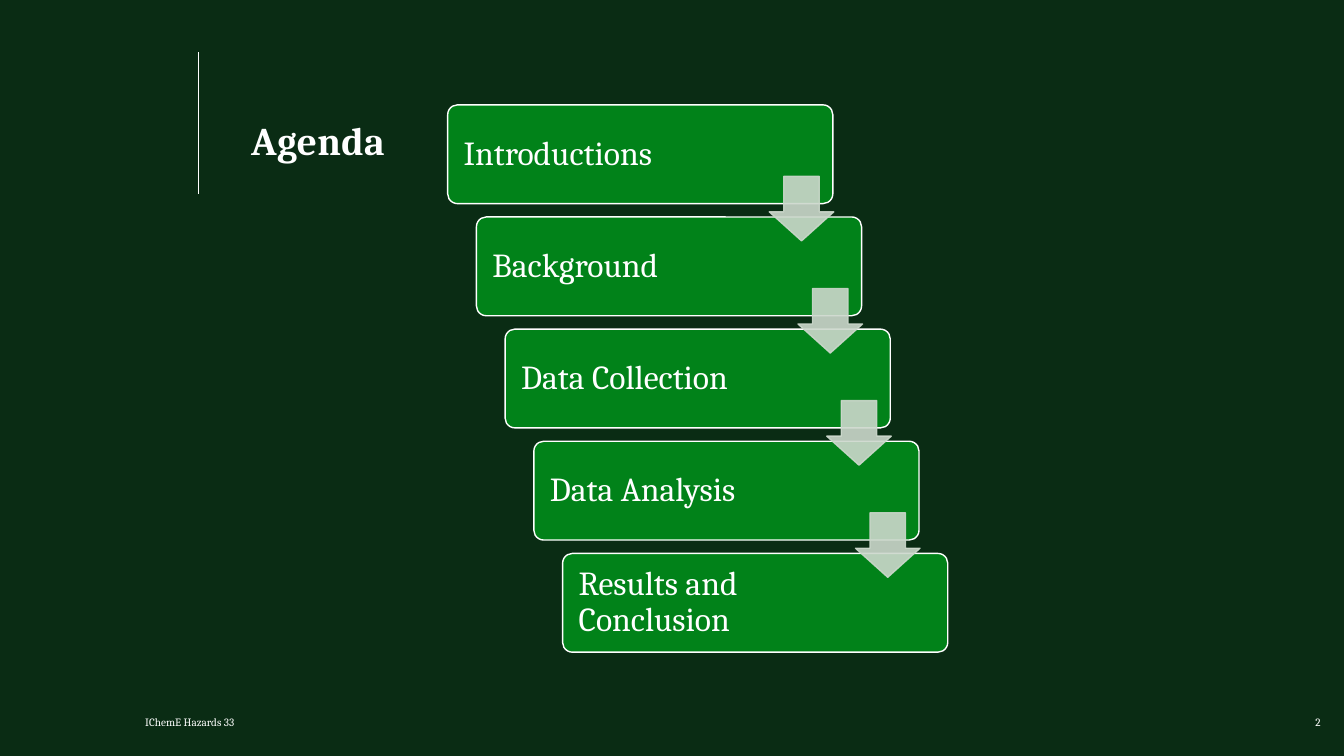
from lxml.etree import SubElement
from pptx import Presentation
from pptx.dml.color import RGBColor
from pptx.enum.shapes import MSO_CONNECTOR, MSO_SHAPE
from pptx.enum.text import MSO_ANCHOR, MSO_AUTO_SIZE, PP_ALIGN
from pptx.oxml.ns import qn
from pptx.util import Inches, Pt

FONT = "Cambria"
WHITE, DARK_GREEN, GREEN, PALE_GREEN = "FFFFFF", "0A2C14", "018219", "CCD8CC"
AGENDA = ["Introductions", "Background", "Data Collection", "Data Analysis",
          "Results and Conclusion"]
STEP_X = 1.14 / (len(AGENDA) - 1)
STEP_Y = 4.45 / (len(AGENDA) - 1)


def set_color(color_format, color):
    """Apply a hex colour to a colour format."""
    color_format.rgb = RGBColor.from_string(color)


def paint(fill, color, alpha=None):
    """Fill solidly, with an optional opacity in percent."""
    fill.solid()
    set_color(fill.fore_color, color)
    if alpha is not None:
        for element in fill._xPr.iter(qn("a:srgbClr")):
            SubElement(element, qn("a:alpha")).set("val", str(alpha * 1000))


def write(shape, text, size, anchor, margins=(0, 0, 0, 0), align=PP_ALIGN.LEFT):
    """Write one white paragraph in a shape and return the paragraph."""
    frame = shape.text_frame
    frame.word_wrap = True
    frame.auto_size = MSO_AUTO_SIZE.NONE
    frame.vertical_anchor = anchor
    (frame.margin_left, frame.margin_top,
     frame.margin_right, frame.margin_bottom) = map(Inches, margins)
    paragraph = frame.paragraphs[0]
    paragraph.text = text
    paragraph.alignment = align
    paragraph.font.name = FONT
    paragraph.font.size = Pt(size)
    set_color(paragraph.font.color, WHITE)
    return paragraph


def add_title(slide, text):
    """Place and format the title."""
    title = slide.shapes.title
    title.left, title.top, title.width, title.height = map(
        Inches, (2.49, 1.21, 2.62, 0.42))
    paragraph = write(title, text, 28, MSO_ANCHOR.MIDDLE)
    paragraph.line_spacing = 0.9
    paragraph.font.bold = True
    paragraph.runs[0].font._element.set("spc", "30")


def add_title_rule(slide):
    """Draw the thin vertical rule beside the title."""
    rule = slide.shapes.add_connector(
        MSO_CONNECTOR.STRAIGHT, *map(Inches, (1.97, 0.52, 1.97, 1.92)))
    set_color(rule.line.color, WHITE)
    rule.line.width = Pt(0.5)
    SubElement(rule._element.spPr, qn("a:effectLst"))


def add_footer(slide, text, left, width, align):
    """Add a small text at the foot of the slide."""
    box = slide.shapes.add_textbox(*map(Inches, (left, 7.03, width, 0.2)))
    write(box, text, 8, MSO_ANCHOR.BOTTOM, align=align)


def add_block(slide, kind, position, adjustments, color, line_color, alpha=None):
    """Add a filled and outlined preset shape."""
    shape = slide.shapes.add_shape(kind, *map(Inches, position))
    shape.shadow.inherit = False
    for index, value in enumerate(adjustments):
        shape.adjustments[index] = value
    paint(shape.fill, color, alpha)
    paint(shape.line.fill, line_color, alpha)
    shape.line.width = Pt(1)
    return shape


def add_step(slide, index, text):
    """Add one agenda step of the staircase."""
    position = (4.44 + index * STEP_X, 1.04 + index * STEP_Y, 3.82, 0.98)
    step = add_block(slide, MSO_SHAPE.ROUNDED_RECTANGLE, position, [0.1],
                     GREEN, WHITE)
    paragraph = write(step, text, 24, MSO_ANCHOR.MIDDLE, (0.13, 0.1, 1.05, 0.1))
    paragraph.line_spacing = 0.9


def add_arrow(slide, index):
    """Add the arrow that leads from one step to the next."""
    position = (7.63 + index * STEP_X, 1.75 + index * STEP_Y, 0.64, 0.64)
    add_block(slide, MSO_SHAPE.DOWN_ARROW, position, [0.55, 0.45],
              PALE_GREEN, PALE_GREEN, alpha=90)


def main():
    """Build the agenda slide."""
    presentation = Presentation()
    presentation.slide_width = Inches(13.33)
    presentation.slide_height = Inches(7.5)
    slide = presentation.slides.add_slide(presentation.slide_layouts[5])
    paint(slide.background.fill, DARK_GREEN)
    add_title_rule(slide)
    add_footer(slide, "IChemE Hazards 33", 1.44, 5.12, PP_ALIGN.LEFT)
    add_footer(slide, "2", 12.51, 0.59, PP_ALIGN.RIGHT)
    add_title(slide, "Agenda")
    for index, text in enumerate(AGENDA):
        add_step(slide, index, text)
    for index in range(len(AGENDA) - 1):
        add_arrow(slide, index)
    presentation.save("out.pptx")


if __name__ == "__main__":
    main()
